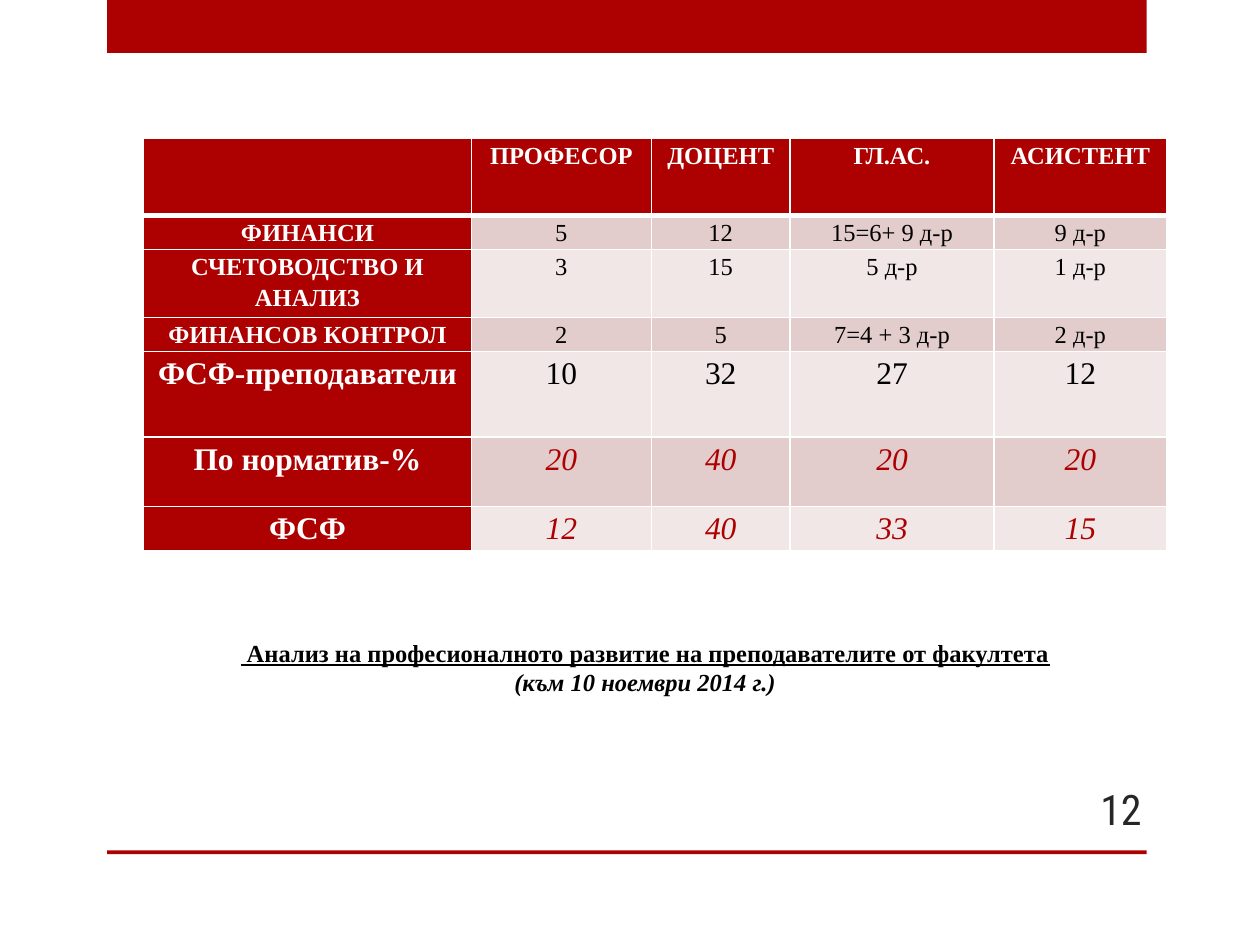
from lxml.etree import SubElement
from pptx import Presentation
from pptx.dml.color import RGBColor
from pptx.enum.shapes import MSO_SHAPE as Shape
from pptx.enum.text import MSO_ANCHOR as Anchor, PP_ALIGN as Align
from pptx.oxml.ns import qn
from pptx.util import Inches, Pt

RED = RGBColor(0xAD, 0x01, 0x01)
WHITE = RGBColor(0xFF, 0xFF, 0xFF)
BLACK = RGBColor(0x00, 0x00, 0x00)
GREY = RGBColor(0x26, 0x26, 0x26)
DARK_BAND = RGBColor(0xE3, 0xCC, 0xCC)
LIGHT_BAND = RGBColor(0xF1, 0xE7, 0xE7)
SERIF = "Times New Roman"

TITLE = " Анализ на професионалното развитие на преподавателите от факултета"
DATE = "(към 10 ноември 2014 г.)"
PAGE_NUMBER = "12"
BARS = [(0, 0.42), (6.75, 0.03)]
COLUMN_WIDTHS = [2.6, 1.43, 1.1, 1.62, 1.37]
ROWS = [
    (0.61, 14, ["", "ПРОФЕСОР", "ДОЦЕНТ", "ГЛ.АС.", "АСИСТЕНТ"]),
    (0.27, 14, ["ФИНАНСИ", "5", "12", "15=6+ 9 д-р", "9 д-р"]),
    (0.54, 14, ["СЧЕТОВОДСТВО И АНАЛИЗ", "3", "15", "5 д-р", "1 д-р"]),
    (0.27, 14, ["ФИНАНСОВ КОНТРОЛ", "2", "5", "7=4 + 3 д-р", "2 д-р"]),
    (0.68, 18, ["ФСФ-преподаватели", "10", "32", "27", "12"]),
    (0.55, 18, ["По норматив-%", "20", "40", "20", "20"]),
    (0.35, 18, ["ФСФ", "12", "40", "33", "15"]),
]
PERCENT_ROWS = (5, 6)


def add_run(paragraph, text, size, color, font=SERIF, bold=False, italic=False, underline=False):
    run = paragraph.add_run()
    run.text = text
    run.font.name = font
    run.font.size = Pt(size)
    run.font.color.rgb = color
    run.font.bold = bold
    run.font.italic = italic
    run.font.underline = underline


def set_borders(cell, top, bottom):
    properties = cell._tc.get_or_add_tcPr()
    for side, width in (("L", 1), ("R", 1), ("T", top), ("B", bottom)):
        line = SubElement(properties, qn(f"a:ln{side}"), w=str(Pt(width)))
        fill = SubElement(line, qn("a:solidFill"))
        SubElement(fill, qn("a:srgbClr"), val=str(WHITE))


def add_bars(slide):
    for top, height in BARS:
        bar = slide.shapes.add_shape(
            Shape.RECTANGLE, Inches(0.85), Inches(top), Inches(8.25), Inches(height))
        bar.shadow.inherit = False
        bar.fill.solid()
        bar.fill.fore_color.rgb = RED
        bar.line.fill.background()


def format_title(slide):
    title = slide.shapes.title
    title.left, title.top = Inches(1.07), Inches(5.01)
    title.width, title.height = Inches(8.1), Inches(0.88)
    frame = title.text_frame
    frame.word_wrap = True
    frame.vertical_anchor = Anchor.TOP
    paragraph = frame.paragraphs[0]
    paragraph.alignment = Align.CENTER
    add_run(paragraph, TITLE, 14, BLACK, bold=True, underline=True)
    paragraph.add_line_break()
    add_run(paragraph, DATE, 14, BLACK, bold=True, italic=True)


def add_page_number(slide):
    box = slide.shapes.add_textbox(Inches(8.33), Inches(6.22), Inches(0.83), Inches(0.4))
    frame = box.text_frame
    frame.word_wrap = True
    frame.vertical_anchor = Anchor.MIDDLE
    paragraph = frame.paragraphs[0]
    paragraph.alignment = Align.RIGHT
    add_run(paragraph, PAGE_NUMBER, 24, GREY, font="Roboto Condensed")


def add_staff_table(slide):
    table = slide.shapes.add_table(
        len(ROWS), len(COLUMN_WIDTHS), Inches(1.14), Inches(1.1),
        Inches(sum(COLUMN_WIDTHS)), Inches(sum(row[0] for row in ROWS))).table
    for column, width in zip(table.columns, COLUMN_WIDTHS):
        column.width = Inches(width)
    for row_index, (height, size, texts) in enumerate(ROWS):
        table.rows[row_index].height = Inches(height)
        band = DARK_BAND if row_index % 2 else LIGHT_BAND
        percent = row_index in PERCENT_ROWS
        for column_index, text in enumerate(texts):
            cell = table.cell(row_index, column_index)
            heading = row_index == 0 or column_index == 0
            set_borders(cell, 3 if row_index == 1 else 1, 3 if row_index == 0 else 1)
            cell.fill.solid()
            cell.fill.fore_color.rgb = RED if heading else band
            cell.margin_left = cell.margin_right = Inches(0.07)
            cell.margin_top = cell.margin_bottom = 0
            if not text:
                continue
            paragraph = cell.text_frame.paragraphs[0]
            paragraph.alignment = Align.CENTER
            paragraph.line_spacing = 1.15
            color = WHITE if heading else RED if percent else BLACK
            add_run(paragraph, text, size, color, bold=heading,
                    italic=percent and not heading)


def main():
    presentation = Presentation()
    presentation.slide_width, presentation.slide_height = Inches(10), Inches(7.5)
    slide = presentation.slides.add_slide(presentation.slide_layouts[5])
    add_bars(slide)
    format_title(slide)
    add_page_number(slide)
    add_staff_table(slide)
    presentation.save("out.pptx")


if __name__ == "__main__":
    main()
